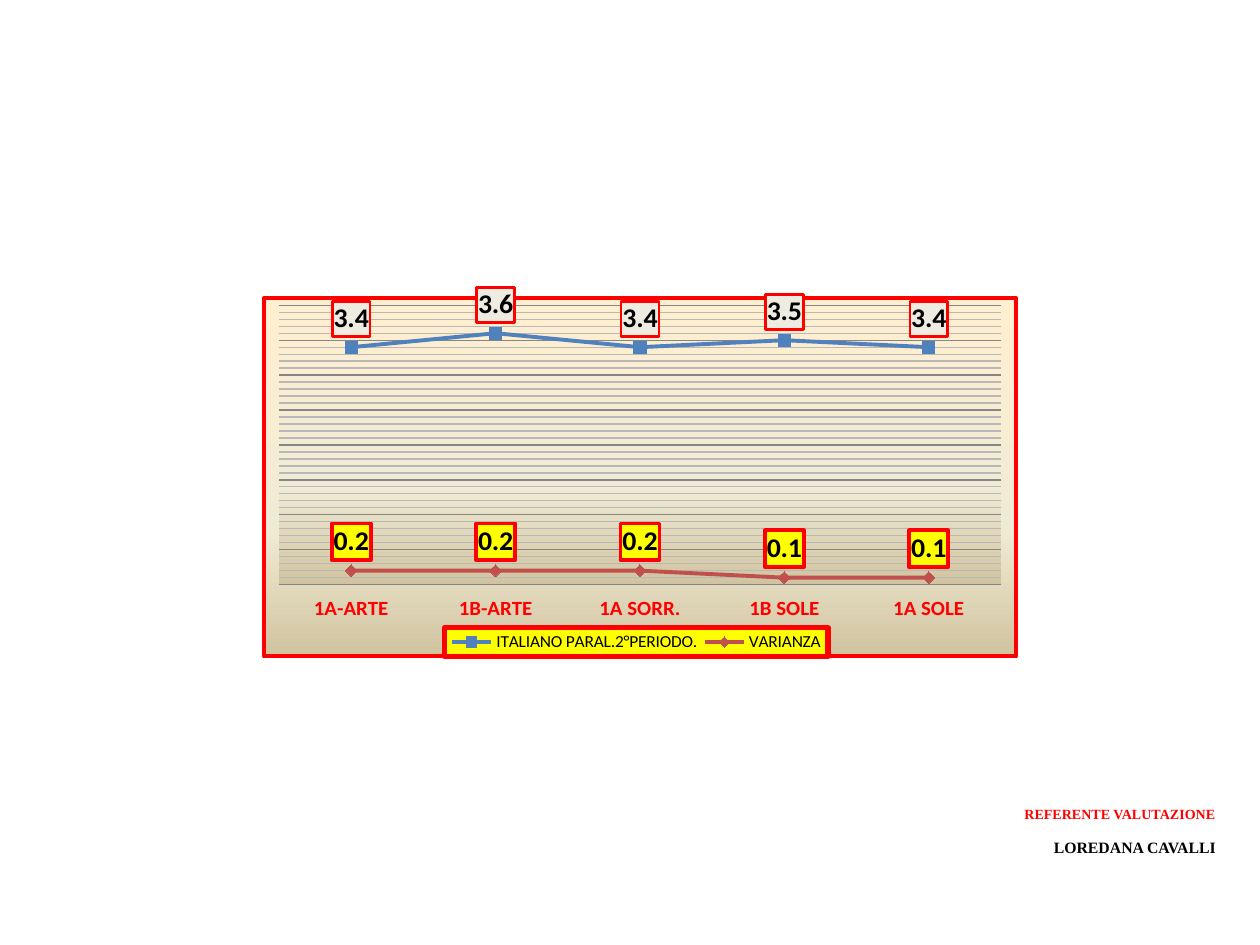
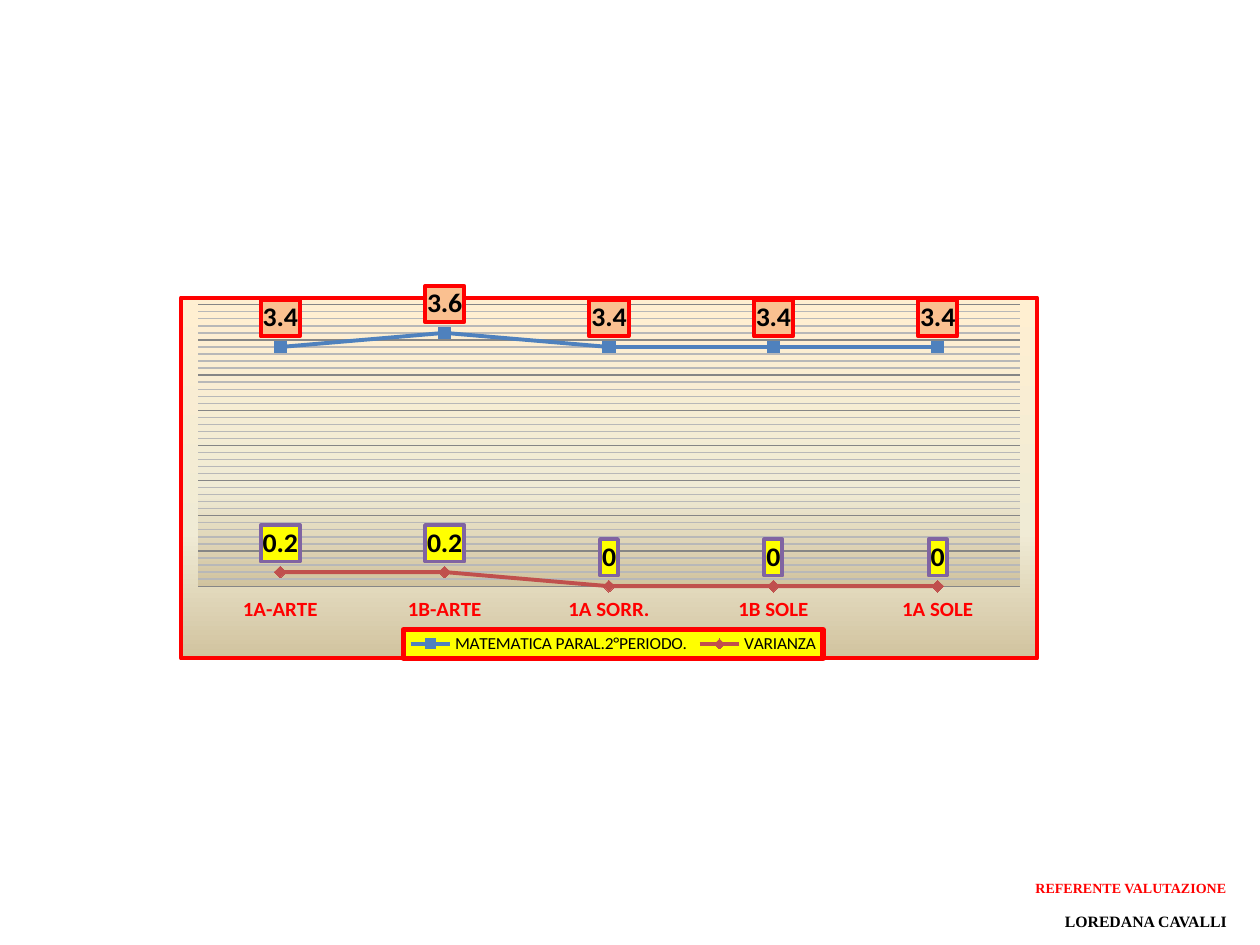
from lxml import etree
from pptx import Presentation
from pptx.chart.data import CategoryChartData
from pptx.dml.color import RGBColor
from pptx.enum.chart import (XL_CHART_TYPE, XL_LABEL_POSITION, XL_LEGEND_POSITION,
                             XL_MARKER_STYLE, XL_TICK_LABEL_POSITION, XL_TICK_MARK)
from pptx.enum.text import MSO_AUTO_SIZE, PP_ALIGN
from pptx.oxml import parse_xml
from pptx.oxml.ns import qn
from pptx.util import Emu, Pt

LINE = XL_CHART_TYPE.LINE_MARKERS
ABOVE = XL_LABEL_POSITION.ABOVE
BOTTOM = XL_LEGEND_POSITION.BOTTOM
LOW = XL_TICK_LABEL_POSITION.LOW
NONE = XL_TICK_MARK.NONE
MARKS = (XL_MARKER_STYLE.SQUARE, XL_MARKER_STYLE.DIAMOND)
FIT = MSO_AUTO_SIZE.SHAPE_TO_FIT_TEXT
RIGHT = PP_ALIGN.RIGHT

SCALE = 914400 / 126
RED, BLACK, YELLOW = "FF0000", "000000", "FFFF00"
SAND, PEACH, PURPLE = "EEECE1", "FAC090", "8064A2"
GRAY, PALE = "868686", "B8B8B8"
TONES = ("4F81BD", "C0504D")
BLEND = ((0, "FFEFD1"), (65, "F0EBD5"), (100, "D1C39F"))
GROUPS = ("1A-ARTE", "1B-ARTE", "1A SORR.", "1B SOLE", "1A SOLE")
PLOT_BOX = (0.02, 0.02, 0.96, 0.78)
SPACES = ('xmlns:c="http://schemas.openxmlformats.org/drawingml/2006/chart" '
          'xmlns:a="http://schemas.openxmlformats.org/drawingml/2006/main"')


def px(count):
    """Turn px into EMU."""
    return Emu(round(count * SCALE))


def rgb(code):
    """Turn a hex string into a colour."""
    return RGBColor.from_string(code)


def style(font, size, color, bold=False, face="Calibri"):
    """Format a font."""
    font.name, font.size, font.bold = face, Pt(size), bold
    font.color.rgb = rgb(color)


def stroke(line, color, width):
    """Format a line."""
    line.color.rgb = rgb(color)
    line.width = Pt(width)


def solid(color):
    """Return the XML of a plain fill."""
    return f'<a:solidFill><a:srgbClr val="{color}"/></a:solidFill>'


def blend():
    """Return the XML of the downward gradient."""
    stops = "".join(f'<a:gs pos="{at * 1000}"><a:srgbClr val="{color}"/></a:gs>'
                    for at, color in BLEND)
    return f'<a:gradFill><a:gsLst>{stops}</a:gsLst><a:lin ang="5400000" scaled="0"/></a:gradFill>'


def frame(fill, color=None, width=0):
    """Return chart shape properties with a fill and an outline."""
    inner = solid(color) if color else "<a:noFill/>"
    return parse_xml(f'<c:spPr {SPACES}>{fill}<a:ln w="{Pt(width)}">{inner}</a:ln></c:spPr>')


def place(part, index, box):
    """Give a chart part a manual layout in shares of the chart."""
    for old in part.findall(qn("c:layout")):
        part.remove(old)
    layout = parse_xml(f"<c:layout {SPACES}/>")
    manual = etree.SubElement(layout, qn("c:manualLayout"))
    items = [("xMode", "edge"), ("yMode", "edge"), *zip("xywh", box)]
    if part.tag == qn("c:plotArea"):
        items.insert(0, ("layoutTarget", "inner"))
    for name, value in items:
        etree.SubElement(manual, qn(f"c:{name}")).set("val", str(value))
    part.insert(index, layout)


def box_in(part, props):
    """Put shape properties ahead of the text properties of a part."""
    part.find(qn("c:txPr")).addprevious(props)


def set_axes(chart):
    """Format the axes and the two sets of grid lines."""
    base = chart.category_axis
    base.major_tick_mark = base.minor_tick_mark = NONE
    base.tick_label_position = LOW
    style(base.tick_labels.font, 12, RED, True)
    stroke(base.format.line, GRAY, 0.75)
    axis = chart.value_axis
    axis.minimum_scale, axis.maximum_scale = 0, 4
    axis.major_unit, axis.minor_unit = 0.5, 0.1
    axis.has_major_gridlines = axis.has_minor_gridlines = True
    stroke(axis.major_gridlines.format.line, GRAY, 0.75)
    axis._element.find(qn("c:minorGridlines")).append(frame("", PALE, 0.75))
    axis.visible = False


def set_row(row, tone, mark, tag):
    """Format one series, its markers and its boxed labels."""
    row.smooth = False
    stroke(row.format.line, tone, 2.25)
    row.marker.style, row.marker.size = mark, 7
    row.marker.format.fill.solid()
    row.marker.format.fill.fore_color.rgb = rgb(tone)
    stroke(row.marker.format.line, tone, 0.75)
    labels = row.data_labels
    labels.show_value, labels.position = True, ABOVE
    style(labels.font, 16, BLACK, True)
    fill, edge, width = tag
    box_in(row._element.find(qn("c:dLbls")), frame(solid(fill), edge, width))


def add_graph(slide, box, rows, tags, key):
    """Add the line chart of means and variances."""
    data = CategoryChartData()
    data.categories = GROUPS
    for name, values in rows:
        data.add_series(name, values)
    chart = slide.shapes.add_chart(LINE, *map(px, box), data).chart
    style(chart.font, 10, BLACK)
    chart.has_title = False
    set_axes(chart)
    chart.plots[0].vary_by_categories = False
    for row, tone, mark, tag in zip(chart.plots[0].series, TONES, MARKS, tags):
        set_row(row, tone, mark, tag)
    chart.has_legend = True
    legend = chart.legend
    legend.position, legend.include_in_layout = BOTTOM, False
    style(legend.font, 10, BLACK)
    place(legend._element, 1, key)
    box_in(legend._element, frame(solid(YELLOW), RED, 3))
    space = chart._chartSpace
    area = space.find(".//" + qn("c:plotArea"))
    place(area, 0, PLOT_BOX)
    area.append(frame(blend()))
    box_in(space, frame(blend(), RED, 2.25))


def add_sign(slide, left, top):
    """Add the signature at the lower right."""
    text = slide.shapes.add_textbox(px(left), px(top), px(630), px(66)).text_frame
    text.word_wrap, text.auto_size = True, FIT
    lines = (("REFERENTE VALUTAZIONE", 8, RED), ("LOREDANA CAVALLI", 9, BLACK))
    for index, (words, size, color) in enumerate(lines):
        para = text.add_paragraph() if index else text.paragraphs[0]
        para.alignment, para.line_spacing, para.space_after = RIGHT, 1.07, Pt(8)
        run = para.add_run()
        run.text = words
        style(run.font, size, color, True, "Times New Roman")


def main():
    """Build the two slides."""
    deck = Presentation()
    deck.slide_width, deck.slide_height = px(1260), px(945)
    pages = (
        ((262, 286, 756, 373), (0.24, 0.92, 0.51, 0.08), (598, 798),
         (("ITALIANO PARAL.2°PERIODO.", (3.4, 3.6, 3.4, 3.5, 3.4)),
          ("VARIANZA", (0.2, 0.2, 0.2, 0.1, 0.1))),
         ((SAND, RED, 1.5), (YELLOW, RED, 2.25))),
        ((179, 284, 860, 377), (0.26, 0.92, 0.49, 0.08), (609, 872),
         (("MATEMATICA PARAL.2°PERIODO.", (3.4, 3.6, 3.4, 3.4, 3.4)),
          ("VARIANZA", (0.2, 0.2, 0, 0, 0))),
         ((PEACH, RED, 2.25), (YELLOW, PURPLE, 2.25))),
    )
    for box, key, sign, rows, tags in pages:
        slide = deck.slides.add_slide(deck.slide_layouts[6])
        add_graph(slide, box, rows, tags, key)
        add_sign(slide, *sign)
    deck.save("out.pptx")


if __name__ == "__main__":
    main()
